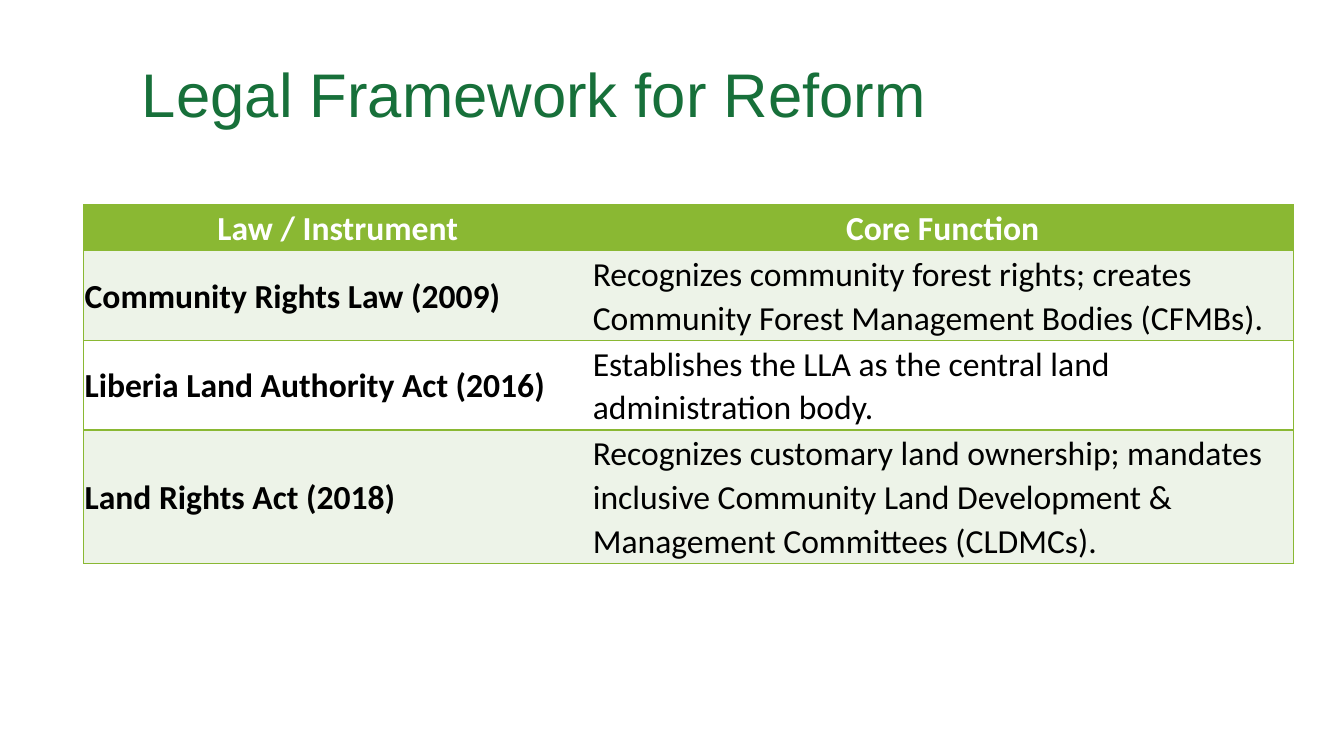
from lxml import etree
from pptx import Presentation
from pptx import util as u
from pptx.dml import color
from pptx.enum import text
from pptx.oxml import ns

GREEN = "8AB833"
HEAD = ("Law / Instrument", "Core Function")
LAWS = [
    ("Community Rights Law (2009)",
     "Recognizes community forest rights; creates Community Forest Management Bodies (CFMBs)."),
    ("Liberia Land Authority Act (2016)",
     "Establishes the LLA as the central land administration body."),
    ("Land Rights Act (2018)",
     "Recognizes customary land ownership; mandates inclusive "
     "Community Land Development & Management Committees (CLDMCs)."),
]


def rgb(code):
    """Turn a hex string into a colour."""
    return color.RGBColor.from_string(code)


def write(frame, words, font="Calibri", size=24, ink="000000", bold=False,
          align="LEFT", lead=1.07, after=8):
    """Put formatted text in a frame."""
    para = frame.paragraphs[0]
    para.alignment = getattr(text.PP_ALIGN, align)
    para.line_spacing = lead
    para.space_after = u.Pt(after)
    run = para.add_run()
    run.text = words
    run.font.name, run.font.size, run.font.bold = font, u.Pt(size), bold
    run.font.color.rgb = rgb(ink)


def edge(cell, drawn):
    """Line the drawn sides of a cell and clear the rest."""
    props = cell._tc.get_or_add_tcPr()
    for side in "LRTB":
        line = etree.SubElement(props, ns.qn("a:ln" + side), w=str(u.Pt(1)))
        if side in drawn:
            fill = etree.SubElement(line, ns.qn("a:solidFill"))
            etree.SubElement(fill, ns.qn("a:srgbClr"), val=GREEN)
        else:
            etree.SubElement(line, ns.qn("a:noFill"))


def title(slide, words, left, top, width, height):
    """Place the slide title in its box."""
    box = slide.shapes.add_textbox(*map(u.Inches, (left, top, width, height)))
    frame = box.text_frame
    frame.word_wrap = True
    frame.vertical_anchor = text.MSO_ANCHOR.MIDDLE
    write(frame, words, font="Arial", size=44, ink="17703A", lead=0.9, after=0)


def laws(slide, left, top, width, height):
    """Place the table of laws in its box."""
    rows = [HEAD] + LAWS
    grid = slide.shapes.add_table(
        len(rows), 2, *map(u.Inches, (left, top, width, height))).table
    for col, share in zip(grid.columns, (0.42, 0.58)):
        col.width = u.Inches(width * share)
    lines = (1, 2, 2, 3)
    for row, count in zip(grid.rows, lines):
        row.height = u.Inches(height * count / sum(lines))
    for r, row in enumerate(rows):
        for c, words in enumerate(row):
            cell = grid.cell(r, c)
            edge(cell, "RTB" if c else "LTB")
            cell.fill.solid()
            cell.fill.fore_color.rgb = rgb(
                GREEN if r == 0 else "EDF3E8" if r % 2 else "FFFFFF")
            cell.vertical_anchor = text.MSO_ANCHOR.MIDDLE
            cell.margin_left = cell.margin_right = u.Inches(0.01)
            cell.margin_top = cell.margin_bottom = u.Inches(0.01)
            write(cell.text_frame, words, bold=r == 0 or c == 0,
                  ink="000000" if r else "FFFFFF",
                  align="LEFT" if r else "CENTER")


def main():
    """Build and save the slide."""
    deck = Presentation()
    deck.slide_width, deck.slide_height = u.Inches(13.33), u.Inches(7.5)
    slide = deck.slides.add_slide(deck.slide_layouts[6])
    laws(slide, 0.83, 2.03, 12, 3.5)
    title(slide, "Legal Framework for Reform", 1.31, 0.24, 10.48, 1.45)
    deck.save("out.pptx")


if __name__ == "__main__":
    main()
